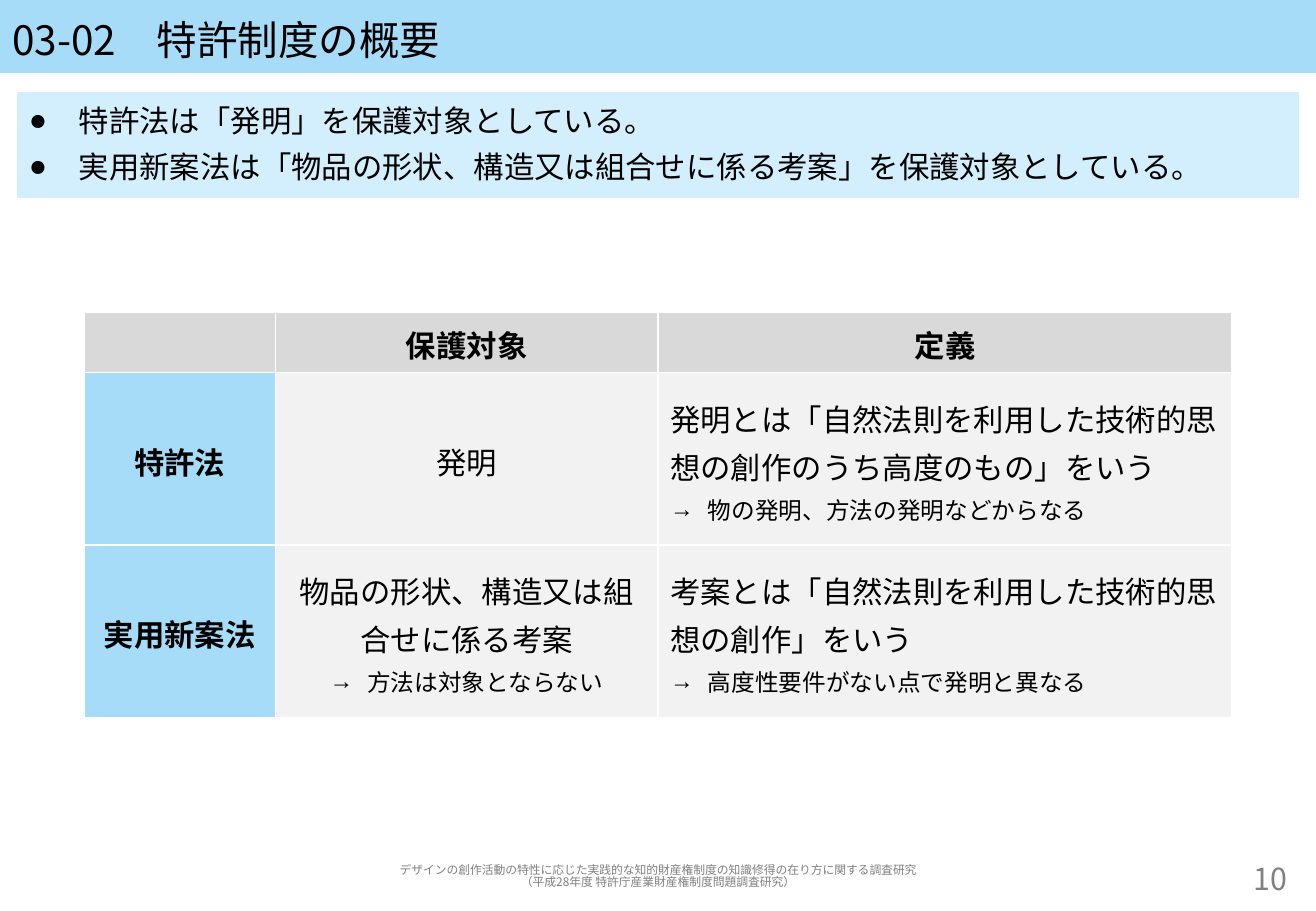
from lxml.etree import SubElement
from pptx import Presentation
from pptx.dml.color import RGBColor
from pptx.enum.text import MSO_ANCHOR, MSO_AUTO_SIZE, PP_ALIGN
from pptx.oxml.ns import qn
from pptx.util import Inches, Pt

BLACK = RGBColor(0x00, 0x00, 0x00)
GRAY = RGBColor(0x80, 0x80, 0x80)
WHITE = RGBColor(0xFF, 0xFF, 0xFF)
BLUE = RGBColor(0xA7, 0xDC, 0xF9)
PALE_BLUE = RGBColor(0xD3, 0xEE, 0xFC)
HEADER_GRAY = RGBColor(0xD9, 0xD9, 0xD9)
PALE_GRAY = RGBColor(0xF2, 0xF2, 0xF2)

JAPANESE_FONT = "Noto Sans CJK JP"
TABLE_FONT = "Arial"
SLIDE_WIDTH, SLIDE_HEIGHT = 10.83, 7.5
MARGIN = 0.14
CONTENT_WIDTH = SLIDE_WIDTH - 2 * MARGIN
FOOTER_TOP, FOOTER_HEIGHT = 7.06, 0.31

TABLE_ROWS = [
    [[], ["保護対象"], ["定義"]],
    [["特許法"], ["発明"],
     ["発明とは「自然法則を利用した技術的思想の創作のうち高度のもの」をいう",
      "物の発明、方法の発明などからなる"]],
    [["実用新案法"],
     ["物品の形状、構造又は組合せに係る考案", "方法は対象とならない"],
     ["考案とは「自然法則を利用した技術的思想の創作」をいう",
      "高度性要件がない点で発明と異なる"]],
]


def place(shape, left, top, width, height):
    shape.left, shape.top = Inches(left), Inches(top)
    shape.width, shape.height = Inches(width), Inches(height)


def fill_solid(target, color):
    target.fill.solid()
    target.fill.fore_color.rgb = color


def add_bullet(paragraph, character, indent):
    """Give the paragraph a hanging bullet; call after its spacing is set."""
    properties = paragraph._p.get_or_add_pPr()
    properties.set("marL", str(Inches(indent)))
    properties.set("indent", str(-Inches(indent)))
    SubElement(properties, qn("a:buFont"), typeface=TABLE_FONT)
    SubElement(properties, qn("a:buChar"), char=character)


def write_paragraph(paragraph, text, size, color=BLACK, font=JAPANESE_FONT,
                    bold=False, alignment=PP_ALIGN.LEFT):
    paragraph.alignment = alignment
    paragraph.line_spacing = 1.1
    run = paragraph.add_run()
    run.text = text
    run.font.size = Pt(size)
    run.font.bold = bold
    run.font.color.rgb = color
    run.font.name = font
    SubElement(run._r.get_or_add_rPr(), qn("a:ea"), typeface=JAPANESE_FONT)


def paragraph_at(text_frame, index):
    return text_frame.paragraphs[0] if index == 0 else text_frame.add_paragraph()


def add_title(slide, left, top, width, height):
    title = slide.shapes.title
    place(title, left, top, width, height)
    fill_solid(title, BLUE)
    title.text_frame.vertical_anchor = MSO_ANCHOR.MIDDLE
    write_paragraph(title.text_frame.paragraphs[0], "03-02\u3000特許制度の概要".replace("\u3000", "　"), 24)


def add_summary(slide, left, top, width, height):
    box = slide.shapes.add_textbox(0, 0, 0, 0)
    place(box, left, top, width, height)
    fill_solid(box, PALE_BLUE)
    box.text_frame.word_wrap = True
    box.text_frame.auto_size = MSO_AUTO_SIZE.TEXT_TO_FIT_SHAPE
    sentences = ["特許法は「発明」を保護対象としている。",
                 "実用新案法は「物品の形状、構造又は組合せに係る考案」を保護対象としている。"]
    for index, sentence in enumerate(sentences):
        paragraph = paragraph_at(box.text_frame, index)
        write_paragraph(paragraph, sentence, 18)
        paragraph.space_before = Pt(3.6)
        add_bullet(paragraph, "●", 0.41)


def set_white_borders(cell):
    """Draw all four cell edges; call before the cell is filled."""
    properties = cell._tc.get_or_add_tcPr()
    for side in ("a:lnL", "a:lnR", "a:lnT", "a:lnB"):
        line = SubElement(properties, qn(side), w=str(Pt(1)))
        solid = SubElement(line, qn("a:solidFill"))
        SubElement(solid, qn("a:srgbClr"), val=str(WHITE))


def format_cell(cell, texts, row, column):
    set_white_borders(cell)
    is_heading = row == 0 or column == 0
    fill_solid(cell, HEADER_GRAY if row == 0 else BLUE if column == 0 else PALE_GRAY)
    cell.vertical_anchor = MSO_ANCHOR.MIDDLE
    centered = is_heading or column == 1
    alignment = PP_ALIGN.CENTER if centered else PP_ALIGN.LEFT
    for index, text in enumerate(texts):
        paragraph = paragraph_at(cell.text_frame, index)
        is_note = index > 0
        write_paragraph(paragraph, text, 14 if is_note else 18, font=TABLE_FONT,
                        bold=is_heading, alignment=alignment)
        if is_note:
            add_bullet(paragraph, "→", 0.31)


def add_comparison_table(slide, left, top, width, height):
    header_height = 0.47
    body_height = (height - header_height) / (len(TABLE_ROWS) - 1)
    frame = slide.shapes.add_table(len(TABLE_ROWS), len(TABLE_ROWS[0]), Inches(left),
                                   Inches(top), Inches(width), Inches(height))
    table = frame.table
    for column, share in zip(table.columns, (1, 2, 3)):
        column.width = Inches(width * share / 6)
    for row, texts_in_row in enumerate(TABLE_ROWS):
        table.rows[row].height = Inches(body_height if row else header_height)
        for column, texts in enumerate(texts_in_row):
            format_cell(table.cell(row, column), texts, row, column)


def add_footer_text(slide, left, top, width, height, lines, size, alignment):
    box = slide.shapes.add_textbox(0, 0, 0, 0)
    place(box, left, top, width, height)
    box.text_frame.word_wrap = True
    box.text_frame.vertical_anchor = MSO_ANCHOR.MIDDLE
    for index, line in enumerate(lines):
        write_paragraph(paragraph_at(box.text_frame, index), line, size, GRAY,
                        alignment=alignment)
    return box


def add_footer(slide, left, top, width, height):
    number_width = 1.34
    add_footer_text(slide, left + width - number_width, top, number_width, height,
                    ["10"], 18, PP_ALIGN.RIGHT)
    credit = add_footer_text(
        slide, left, top, width, height,
        ["デザインの創作活動の特性に応じた実践的な知的財産権制度の知識修得の在り方に関する調査研究",
         "（平成28年度 特許庁産業財産権制度問題調査研究）"], 8, PP_ALIGN.CENTER)
    credit.text_frame.auto_size = MSO_AUTO_SIZE.TEXT_TO_FIT_SHAPE


def main():
    presentation = Presentation()
    presentation.slide_width = Inches(SLIDE_WIDTH)
    presentation.slide_height = Inches(SLIDE_HEIGHT)
    slide = presentation.slides.add_slide(presentation.slide_layouts.get_by_name("Title Only"))
    add_title(slide, 0, 0, SLIDE_WIDTH, 0.6)
    add_summary(slide, MARGIN, 0.76, CONTENT_WIDTH, 0.87)
    add_comparison_table(slide, 0.69, 2.57, 9.45, 3.31)
    add_footer(slide, MARGIN, FOOTER_TOP, CONTENT_WIDTH, FOOTER_HEIGHT)
    presentation.save("out.pptx")


if __name__ == "__main__":
    main()
